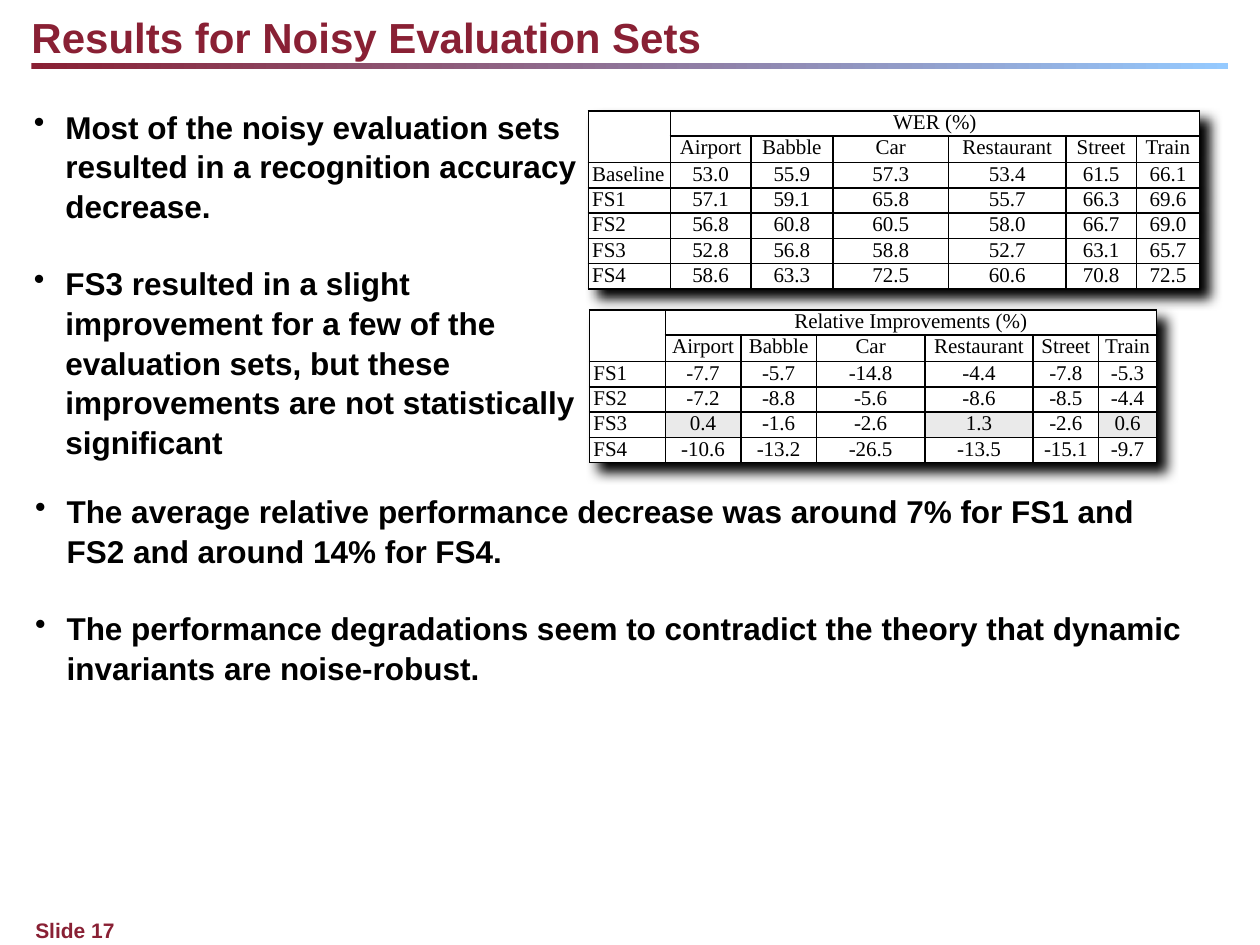
import pptx
import pptx.chart.data
import pptx.dml.color
import pptx.enum.dml
import pptx.enum.shapes
import pptx.enum.text
import pptx.oxml
import pptx.oxml.ns
import pptx.util
from lxml import etree

Inches, Pt = pptx.util.Inches, pptx.util.Pt
qn = pptx.oxml.ns.qn
NS = 'xmlns:a="http://schemas.openxmlformats.org/drawingml/2006/main"'

MAROON, SKY, BLACK, WHITE, HIGHLIGHT = "892034", "95CAFF", "000000", "FFFFFF", "EAEAEA"
HEADING = dict(name="Arial", size=Pt(24), bold=True)
FOOTER = dict(name="Arial", size=Pt(12), bold=True)
BODY = dict(name="Arial", size=Pt(18), bold=True)
CELL = dict(name="Times New Roman", size=Pt(12), bold=False)

NOISES = ["Airport", "Babble", "Car", "Restaurant", "Street", "Train"]
WER = [
    ["Baseline", "53.0", "55.9", "57.3", "53.4", "61.5", "66.1"],
    ["FS1", "57.1", "59.1", "65.8", "55.7", "66.3", "69.6"],
    ["FS2", "56.8", "60.8", "60.5", "58.0", "66.7", "69.0"],
    ["FS3", "52.8", "56.8", "58.8", "52.7", "63.1", "65.7"],
    ["FS4", "58.6", "63.3", "72.5", "60.6", "70.8", "72.5"],
]
IMPROVEMENTS = [
    ["FS1", "-7.7", "-5.7", "-14.8", "-4.4", "-7.8", "-5.3"],
    ["FS2", "-7.2", "-8.8", "-5.6", "-8.6", "-8.5", "-4.4"],
    ["FS3", "0.4", "-1.6", "-2.6", "1.3", "-2.6", "0.6"],
    ["FS4", "-10.6", "-13.2", "-26.5", "-13.5", "-15.1", "-9.7"],
]


def rgb(color):
    return pptx.dml.color.RGBColor.from_string(color)


def set_font(font, style, color):
    for name, value in style.items():
        setattr(font, name, value)
    font.color.rgb = rgb(color)


def add_text_frame(slide, x, y, w, h):
    tf = slide.shapes.add_textbox(Inches(x), Inches(y), Inches(w), Inches(h)).text_frame
    tf.word_wrap = True
    return tf


def add_label(slide, x, y, w, h, text, style):
    tf = add_text_frame(slide, x, y, w, h)
    tf.margin_left = tf.margin_top = tf.margin_right = tf.margin_bottom = 0
    r = tf.paragraphs[0].add_run()
    r.text = text
    set_font(r.font, style, MAROON)


def add_rule(slide, x, y, w, h):
    sp = slide.shapes.add_shape(pptx.enum.shapes.MSO_SHAPE.RECTANGLE,
                                Inches(x), Inches(y), Inches(w), Inches(h))
    sp.shadow.inherit = False
    sp.line.fill.background()
    sp.fill.gradient()
    sp.fill.gradient_angle = 0
    for stop, color in zip(sp.fill.gradient_stops, (MAROON, SKY)):
        stop.color.rgb = rgb(color)


def add_bullets(slide, x, y, w, h, items):
    tf = add_text_frame(slide, x, y, w, h)
    for i, text in enumerate(items):
        p = tf.paragraphs[0] if i == 0 else tf.add_paragraph()
        pPr = p._p.get_or_add_pPr()
        pPr.set("marL", str(Inches(0.25)))
        pPr.set("indent", str(-Inches(0.25)))
        etree.SubElement(pPr, qn("a:buChar"), char="•")
        p.line_spacing = 1.05
        if i:
            p.space_before = Pt(21.5)
        r = p.add_run()
        r.text = text
        set_font(r.font, BODY, BLACK)


def format_cell(cell, text, align, fill):
    cell.margin_left = cell.margin_right = Inches(0.03)
    cell.margin_top = cell.margin_bottom = 0
    p = cell.text_frame.paragraphs[0]
    p.alignment = align
    if text:
        r = p.add_run()
        r.text = text
        set_font(r.font, CELL, BLACK)
    else:
        etree.SubElement(p._p, qn("a:endParaRPr"), sz="1200")
    tcPr = cell._tc.get_or_add_tcPr()
    for side in ("lnL", "lnR", "lnT", "lnB"):
        tcPr.append(pptx.oxml.parse_xml(
            f'<a:{side} {NS} w="{Pt(1)}"><a:solidFill><a:srgbClr val="{BLACK}"/>'
            f'</a:solidFill></a:{side}>'))
    cell.fill.solid()
    cell.fill.fore_color.rgb = rgb(fill)


def add_table_shadow(table):
    table._tbl.tblPr.insert(0, pptx.oxml.parse_xml(
        f'<a:effectLst {NS}><a:outerShdw blurRad="{Inches(0.1)}" dist="{Inches(0.1)}" '
        f'dir="2700000" algn="tl" rotWithShape="0"><a:srgbClr val="{BLACK}"/>'
        f'</a:outerShdw></a:effectLst>'))


def add_results_table(slide, x, y, widths, title, body, highlights=()):
    """Two header rows above body; highlights holds the shaded values."""
    rows = [["", title] + [""] * (len(NOISES) - 1), [""] + NOISES] + body
    heights = [0.2, 0.21] + [0.2] * len(body)
    table = slide.shapes.add_table(len(rows), len(widths), Inches(x), Inches(y),
                                   Inches(sum(widths)), Inches(sum(heights))).table
    table.first_row = table.horz_banding = False
    for column, width in zip(table.columns, widths):
        column.width = Inches(width)
    for row, height in zip(table.rows, heights):
        row.height = Inches(height)
    align = pptx.enum.text.PP_ALIGN
    for i, row in enumerate(rows):
        for j, text in enumerate(row):
            format_cell(table.cell(i, j), text, align.CENTER if j else align.LEFT,
                        HIGHLIGHT if text in highlights else WHITE)
    table.cell(0, 0).merge(table.cell(1, 0))
    table.cell(0, 1).merge(table.cell(0, len(NOISES)))
    add_table_shadow(table)


def main():
    prs = pptx.Presentation()
    prs.slide_width, prs.slide_height = Inches(10), Inches(7.5)
    slide = prs.slides.add_slide(prs.slide_layouts[6])
    add_rule(slide, 0.25, 0.5, 9.5, 0.05)
    add_label(slide, 0.28, 7.28, 8.92, 0.2, "Slide 17", FOOTER)
    add_label(slide, 0.25, 0.09, 7.5, 0.4, "Results for Noisy Evaluation Sets", HEADING)
    add_results_table(slide, 4.67, 0.88, [0.65, 0.64, 0.65, 0.92, 0.93, 0.56, 0.5],
                      "WER (%)", WER)
    add_results_table(slide, 4.68, 2.46, [0.6, 0.6, 0.6, 0.86, 0.86, 0.52, 0.46],
                      "Relative Improvements (%)", IMPROVEMENTS, ("0.4", "1.3", "0.6"))
    add_bullets(slide, 0.17, 0.79, 4.51, 2.9, [
        "Most of the noisy evaluation sets resulted in a recognition accuracy decrease.",
        "FS3 resulted in a slight improvement for a few of the evaluation sets, "
        "but these improvements are not statistically significant",
    ])
    add_bullets(slide, 0.18, 3.84, 9.39, 2.88, [
        "The average relative performance decrease was around 7% for FS1 and FS2 "
        "and around 14% for FS4.",
        "The performance degradations seem to contradict the theory that dynamic "
        "invariants are noise-robust.",
    ])
    prs.save("out.pptx")


if __name__ == "__main__":
    main()
